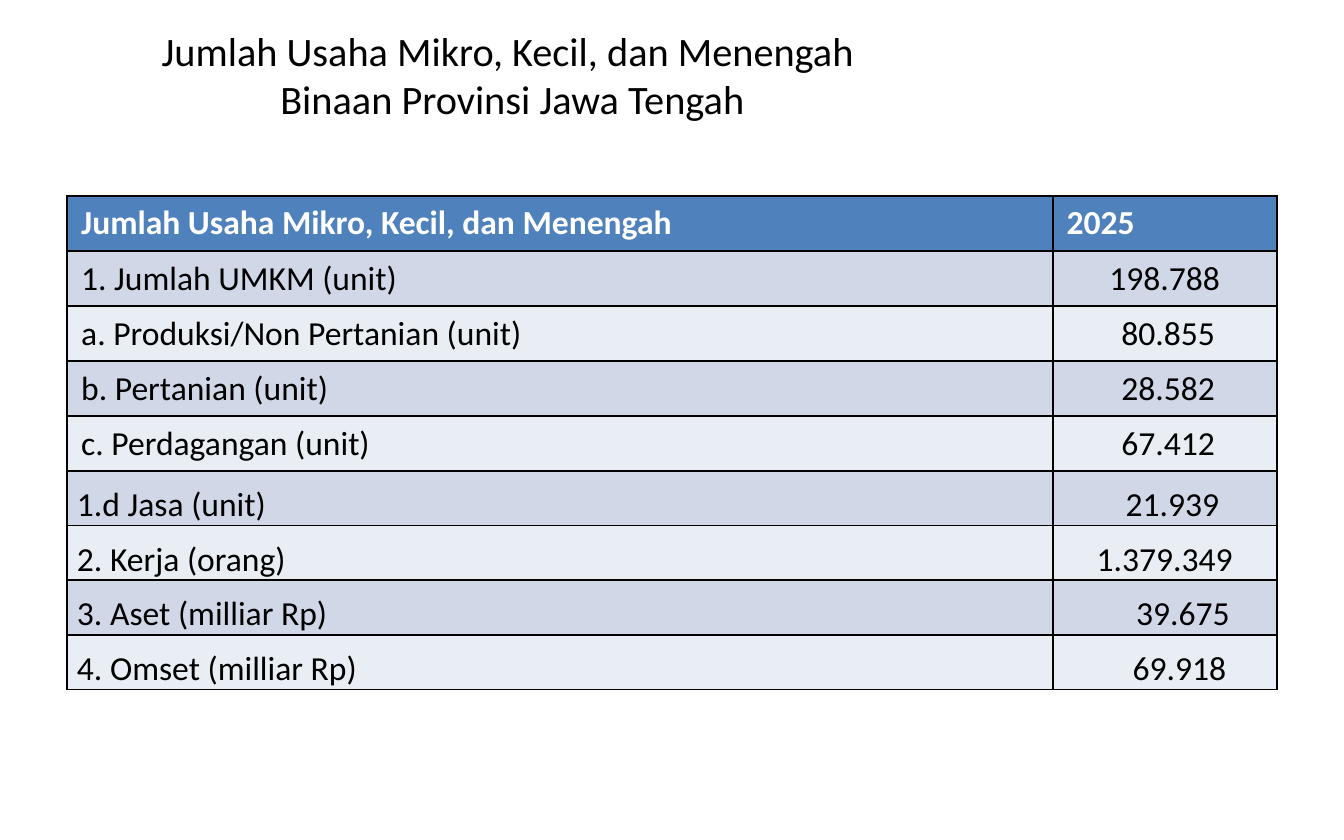
from lxml.etree import SubElement
from pptx import Presentation
from pptx.dml.color import RGBColor
from pptx.enum.text import MSO_ANCHOR, MSO_AUTO_SIZE, PP_ALIGN
from pptx.oxml.ns import qn
from pptx.util import Pt

PX = 9525
FONT = "Calibri"
TITLE = ["Jumlah Usaha Mikro, Kecil, dan Menengah ", "Binaan Provinsi Jawa Tengah"]
HEADER = ("Jumlah Usaha Mikro, Kecil, dan Menengah", "2025")
# label, value, extra left indent of the value
UPPER_ROWS = [
    ("1. Jumlah UMKM (unit)", "198.788", 0),
    ("a. Produksi/Non Pertanian (unit)", "80.855", 5),
    ("b. Pertanian (unit)", "28.582", 5),
    ("c. Perdagangan (unit)", "67.412", 5),
]
LOWER_ROWS = [
    ("1.d Jasa (unit)", "21.939", 11),
    ("2. Kerja (orang)", "1.379.349", 0),
    ("3. Aset (milliar Rp)", "39.675", 26),
    ("4. Omset (milliar Rp)", "69.918", 21),
]
COL_WIDTHS = [704, 160]
BANDS = ["D0D8E8", "E9EDF4"]


def px(n):
    return n * PX


def rgb(value):
    return RGBColor.from_string(value)


def add_run(p, text, size, color="000000", bold=False):
    r = p.add_run()
    r.text = text
    r.font.name = FONT
    r.font.size = Pt(size)
    r.font.bold = bold
    r.font.color.rgb = rgb(color)


def add_title(s, x, y, w, h):
    sp = s.shapes.title
    sp.left, sp.top, sp.width, sp.height = px(x), px(y), px(w), px(h)
    tf = sp.text_frame
    tf.auto_size = MSO_AUTO_SIZE.NONE
    tf.word_wrap = True
    tf.vertical_anchor = MSO_ANCHOR.MIDDLE
    p = tf.paragraphs[0]
    p.alignment = PP_ALIGN.CENTER
    add_run(p, TITLE[0], 21.6)
    p.add_line_break()
    add_run(p, TITLE[1], 21.6)


def set_borders(cell):
    tc_pr = cell._tc.get_or_add_tcPr()
    for i, side in enumerate(("lnL", "lnR", "lnT", "lnB")):
        ln = SubElement(tc_pr, qn(f"a:{side}"), w=str(Pt(1)))
        fill = SubElement(ln, qn("a:solidFill"))
        SubElement(fill, qn("a:srgbClr"), val="000000")
        tc_pr.remove(ln)
        tc_pr.insert(i, ln)


def fill_cell(cell, text, fill, color="000000", bold=False, center=False, lower=False, indent=0):
    cell.fill.solid()
    cell.fill.fore_color.rgb = rgb(fill)
    set_borders(cell)
    side, edge = (7, 0) if lower else (10, 5)
    cell.margin_left, cell.margin_right = px(side + indent), px(side)
    cell.margin_top = cell.margin_bottom = px(edge)
    cell.vertical_anchor = MSO_ANCHOR.BOTTOM if lower else MSO_ANCHOR.TOP
    p = cell.text_frame.paragraphs[0]
    p.alignment = PP_ALIGN.CENTER if center else PP_ALIGN.LEFT
    if lower:
        p.line_spacing = 1.07
        p.space_after = Pt(8)
    add_run(p, text, 18, color, bold)


def add_data_table(s, x, y, w, h):
    rows = UPPER_ROWS + LOWER_ROWS
    count = len(rows) + 1
    table = s.shapes.add_table(count, 2, px(x), px(y), px(w), px(h)).table
    for col, width in zip(table.columns, COL_WIDTHS):
        col.width = px(width)
    for row in table.rows:
        row.height = px(h // count)
    for c, text in enumerate(HEADER):
        fill_cell(table.cell(0, c), text, "4F81BD", "FFFFFF", bold=True)
    for i, (label, value, indent) in enumerate(rows):
        lower = i >= len(UPPER_ROWS)
        band = BANDS[i % 2]
        fill_cell(table.cell(i + 1, 0), label, band, lower=lower)
        fill_cell(table.cell(i + 1, 1), value, band, center=True, lower=lower, indent=indent)


def main():
    prs = Presentation()
    prs.slide_width, prs.slide_height = px(960), px(600)
    s = prs.slides.add_slide(prs.slide_layouts[5])
    add_title(s, 48, 20, 636, 66)
    add_data_table(s, 48, 140, sum(COL_WIDTHS), 351)
    prs.save("out.pptx")


if __name__ == "__main__":
    main()
